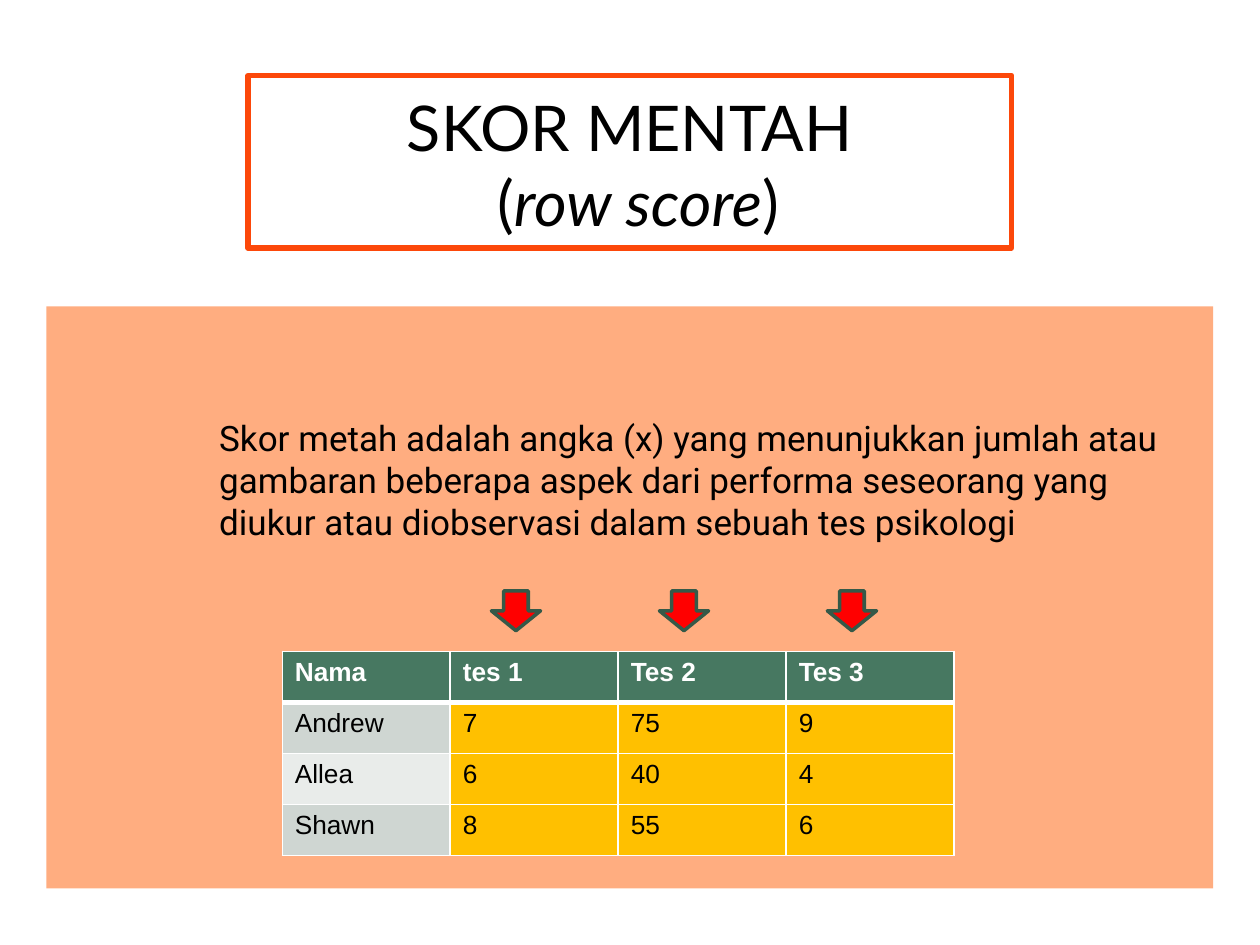
from lxml import etree
from pptx import Presentation
from pptx import util as u
from pptx.dml import color
from pptx.enum import shapes, text
from pptx.oxml import ns


def rgb(hex_value):
    return color.RGBColor.from_string(hex_value)


class SlideBuilder:
    PANEL, OUTLINE, BLACK, WHITE = "FFAD80", "FC480A", "000000", "FFFFFF"
    HEADER, SCORE, BANDS = "477861", "FFC000", ("CFD6D2", "E9ECEA")
    ARROW, ARROW_EDGE = "FF0000", "355948"

    def __init__(self, slide):
        self.slide = slide

    def shape(self, kind, left, top, width, height, fill=None, line=None, weight=1):
        shape = self.slide.shapes.add_shape(
            kind, u.Pt(left), u.Pt(top), u.Pt(width), u.Pt(height))
        shape.shadow.inherit = False
        if fill:
            shape.fill.solid()
            shape.fill.fore_color.rgb = rgb(fill)
        else:
            shape.fill.background()
        if line:
            shape.line.color.rgb = rgb(line)
            shape.line.width = u.Pt(weight)
        else:
            shape.line.fill.background()
        return shape

    def textbox(self, left, top, width, height):
        return self.slide.shapes.add_textbox(
            u.Pt(left), u.Pt(top), u.Pt(width), u.Pt(height))

    def frame(self, shape, left=7.2, top=7.2):
        frame = shape.text_frame
        frame.word_wrap = True
        frame.vertical_anchor = text.MSO_ANCHOR.TOP
        frame.margin_left, frame.margin_top = u.Pt(left), u.Pt(top)
        frame.margin_right = frame.margin_bottom = u.Pt(7.2)
        return frame

    def run(self, paragraph, words, font, size, ink=BLACK, bold=False, italic=False):
        run = paragraph.add_run()
        run.text = words
        run.font.name, run.font.size = font, u.Pt(size)
        run.font.bold, run.font.italic = bold, italic
        run.font.color.rgb = rgb(ink)

    def border(self, cell, side, weight):
        line = etree.SubElement(cell._tc.get_or_add_tcPr(), ns.qn(f"a:ln{side}"),
                                w=str(u.Pt(weight)))
        fill = etree.SubElement(line, ns.qn("a:solidFill"))
        etree.SubElement(fill, ns.qn("a:srgbClr"), val=self.WHITE)

    def table(self, rows, left, top, column_width, row_height):
        columns = len(rows[0])
        table = self.slide.shapes.add_table(
            len(rows), columns, u.Pt(left), u.Pt(top),
            u.Pt(column_width * columns), u.Pt(row_height * len(rows))).table
        for column in table.columns:
            column.width = u.Pt(column_width)
        for r, row in enumerate(rows):
            table.rows[r].height = u.Pt(row_height)
            for c, value in enumerate(row):
                cell = table.cell(r, c)
                # A heavier rule separates the header from the scores
                weights = {"L": 1, "R": 1, "T": 3 if r == 1 else 1, "B": 3 if r == 0 else 1}
                for side, weight in weights.items():
                    self.border(cell, side, weight)
                if r == 0:
                    fill = self.HEADER
                else:
                    fill = self.SCORE if c else self.BANDS[(r - 1) % 2]
                cell.fill.solid()
                cell.fill.fore_color.rgb = rgb(fill)
                self.run(cell.text_frame.paragraphs[0], value, "Arial", 15,
                         self.BLACK if r else self.WHITE, bold=r == 0)


def main():
    deck = Presentation()
    deck.slide_width, deck.slide_height = u.Pt(720), u.Pt(540)
    builder = SlideBuilder(deck.slides.add_slide(deck.slide_layouts[6]))

    # Background panel
    builder.shape(shapes.MSO_SHAPE.RECTANGLE, 26.6, 175, 666.7, 332.6, builder.PANEL)

    # Title
    title = builder.shape(shapes.MSO_SHAPE.RECTANGLE, 141.8, 43.2, 436.3, 98.6,
                          line=builder.OUTLINE, weight=3)
    heading = builder.frame(title).paragraphs[0]
    heading.alignment = text.PP_ALIGN.CENTER
    builder.run(heading, "SKOR MENTAH", "Lato", 36)
    heading.add_line_break()
    builder.run(heading, " (", "Lato", 36)
    builder.run(heading, "row score", "Lato", 36, italic=True)
    builder.run(heading, ")", "Lato", 36)

    # Definition
    definition = builder.frame(builder.textbox(82.1, 207.4, 595.4, 152.6), left=43.2, top=30.6)
    builder.run(definition.paragraphs[0],
                "Skor metah adalah angka (x) yang menunjukkan jumlah atau gambaran "
                "beberapa aspek dari performa seseorang yang diukur atau diobservasi "
                "dalam sebuah tes psikologi", "Roboto", 20)

    # Score table
    scores = [
        ("Nama", "tes 1", "Tes 2", "Tes 3"),
        ("Andrew", "7", "75", "9"),
        ("Allea", "6", "40", "4"),
        ("Shawn", "8", "55", "6"),
    ]
    column_width = 96
    builder.table(scores, 161.3, 372.2, column_width, 29.2)

    # One arrow above each test column
    for test in range(3):
        builder.shape(shapes.MSO_SHAPE.DOWN_ARROW, 280.8 + test * column_width, 337.7,
                      28.1, 22.7, builder.ARROW, builder.ARROW_EDGE, 2)

    deck.save("out.pptx")


if __name__ == "__main__":
    main()
